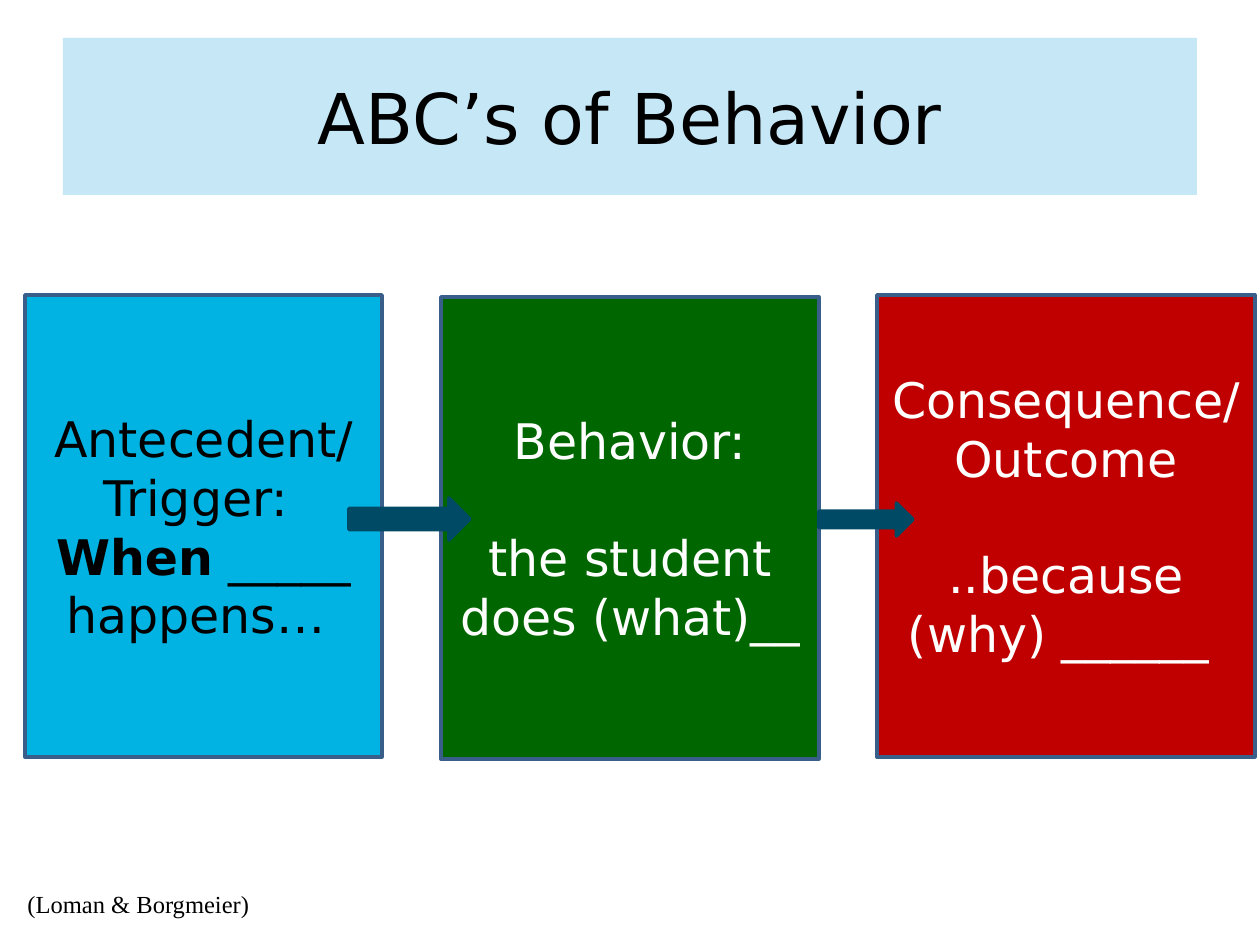
"""Builds the ABC's of Behavior slide."""
from lxml.etree import SubElement
from pptx import Presentation
from pptx.dml.color import RGBColor
from pptx.enum.shapes import MSO_SHAPE
from pptx.enum.text import MSO_ANCHOR, PP_ALIGN
from pptx.oxml.ns import qn
from pptx.util import Emu, Pt

COLORS = {
    "title": "A9DCF2", "antecedent": "00B3E3", "behavior": "006600",
    "consequence": "C00000", "border": "395E89", "arrow": "004A65",
    "black": "000000", "white": "FFFFFF",
}
SANS, SERIF = "DejaVu Sans", "Times New Roman"
LINE_GAP = 33


def px(*values):
    return [Emu(round(v * 914400 / 126)) for v in values]


def add_run(p, text, size, color, font=SANS, bold=False):
    r = p.add_run()
    r.text = text
    r.font.size = Pt(size)
    r.font.name = font
    r.font.bold = bold
    r.font.color.rgb = RGBColor.from_string(COLORS[color])


prs = Presentation()
prs.slide_width, prs.slide_height = px(1260, 945)
s = prs.slides.add_slide(prs.slide_layouts[6])

boxes = [
    (25, 295, 357, "antecedent", "black", 6, [
        (0, [("Antecedent/", False)]),
        (0, [("Trigger: ", False)]),
        (0, [("When", True), (" _____ happens… ", False)]),
    ]),
    (441, 297, 378, "behavior", "white", 6, [
        (0, [("Behavior:", False)]),
        (LINE_GAP, [("the student does (what)__", False)]),
    ]),
    (877, 295, 378, "consequence", "white", 26, [
        (0, [("Consequence/", False)]),
        (0, [("Outcome", False)]),
        (LINE_GAP, [("..because (why) ______ ", False)]),
    ]),
]
for x, y, w, fill, color, bottom, paragraphs in boxes:
    sp = s.shapes.add_shape(MSO_SHAPE.RECTANGLE, *px(x, y, w, 462))
    sp.shadow.inherit = False
    sp.fill.solid()
    sp.fill.fore_color.rgb = RGBColor.from_string(COLORS[fill])
    sp.line.color.rgb = RGBColor.from_string(COLORS["border"])
    sp.line.width = Pt(2)
    tf = sp.text_frame
    tf.word_wrap = True
    tf.vertical_anchor = MSO_ANCHOR.MIDDLE
    tf.margin_bottom = px(bottom)[0]
    for i, (gap, runs) in enumerate(paragraphs):
        p = tf.add_paragraph() if i else tf.paragraphs[0]
        p.alignment = PP_ALIGN.CENTER
        p.space_before = Pt(gap)
        for text, bold in runs:
            add_run(p, text, 28, color, bold=bold)

for x, y, w, h in [(349, 498, 121, 42), (819, 503, 94, 33)]:
    sp = s.shapes.add_shape(MSO_SHAPE.RIGHT_ARROW, *px(x, y, w, h))
    sp.shadow.inherit = False
    sp.fill.solid()
    sp.fill.fore_color.rgb = RGBColor.from_string(COLORS["arrow"])
    sp.line.color.rgb = RGBColor.from_string(COLORS["arrow"])
    sp.line.width = Pt(2)

tf = s.shapes.add_textbox(*px(15, 883, 284, 43)).text_frame
tf.word_wrap = True
add_run(tf.paragraphs[0], "(Loman & Borgmeier)", 14, "black", SERIF)

sp = s.shapes.add_shape(MSO_SHAPE.RECTANGLE, *px(63, 38, 1134, 157))
sp.shadow.inherit = False
sp.fill.solid()
sp.fill.fore_color.rgb = RGBColor.from_string(COLORS["title"])
clr = sp.fill._xPr.find(qn("a:solidFill")).find(qn("a:srgbClr"))
SubElement(clr, qn("a:alpha")).set("val", "66000")
sp.line.fill.background()
tf = sp.text_frame
tf.word_wrap = True
tf.vertical_anchor = MSO_ANCHOR.MIDDLE
p = tf.paragraphs[0]
p.alignment = PP_ALIGN.CENTER
add_run(p, "ABC’s of Behavior", 40, "black")

prs.save("out.pptx")
